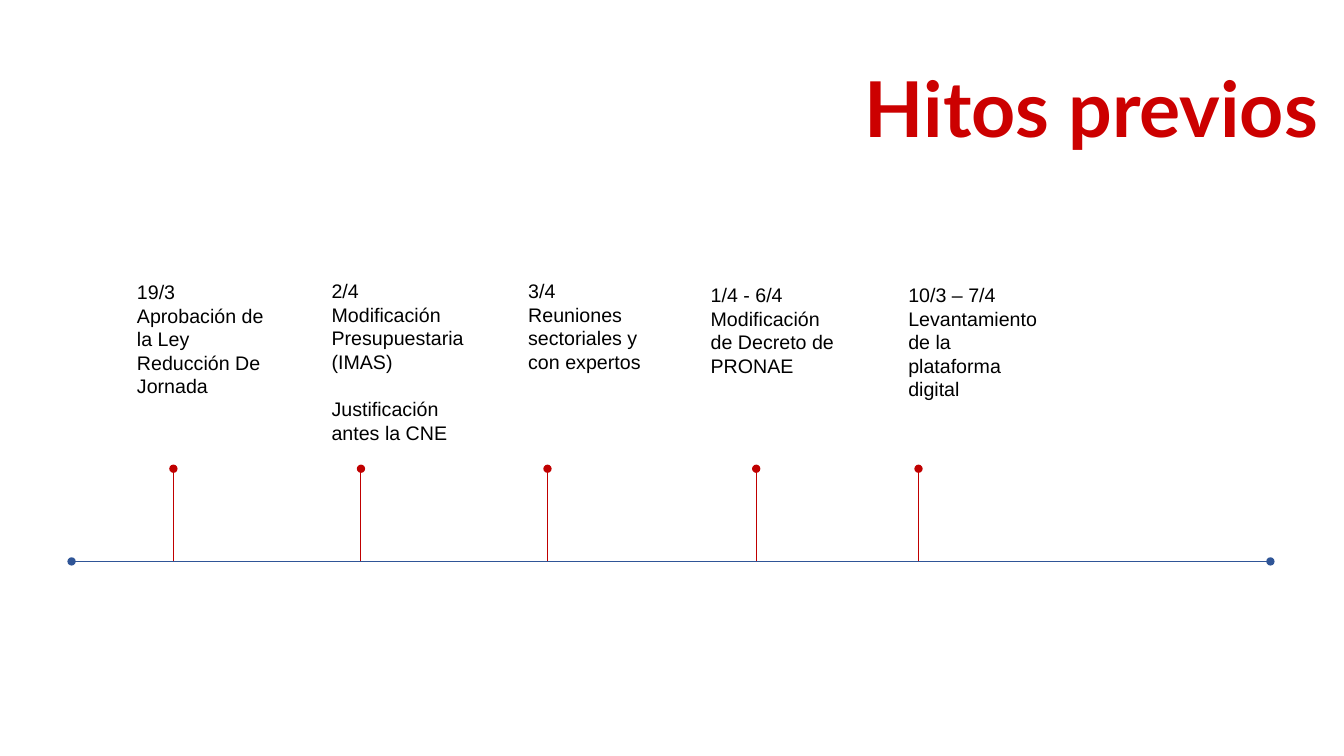
from lxml import etree
from pptx import Presentation
from pptx.dml.color import RGBColor
from pptx.enum.shapes import MSO_CONNECTOR
from pptx.enum.text import MSO_ANCHOR, PP_ALIGN
from pptx.oxml.ns import qn
from pptx.util import Inches, Pt

COLORS = {"title": "CC0000", "text": "000000", "axis": "2F5597", "stem": "C00000"}

TITLE = "Hitos previos"
# stem x, text left, text top, text height, paragraphs
MILESTONES = [
    (1.72, 1.26, 2.73, 1.28, ["19/3", "Aprobación de la Ley Reducción De Jornada"]),
    (3.58, 3.19, 2.72, 1.75, ["2/4", "Modificación Presupuestaria (IMAS)",
                              "Justificación antes la CNE"]),
    (5.43, 5.14, 2.72, 1.04, ["3/4", "Reuniones sectoriales y con expertos"]),
    (7.5, 6.95, 2.76, 1.04, ["1/4 - 6/4", "Modificación de Decreto de PRONAE"]),
    (9.11, 8.91, 2.76, 1.28, ["10/3 – 7/4", "Levantamiento de la plataforma digital"]),
]
AXIS_LEFT, AXIS_RIGHT, AXIS_Y = 0.71, 12.6, 5.57
STEM_TOP = 4.65
TEXT_WIDTH = 1.55
BLOCK_GAP = 17  # one line, before a second note under the same date


def add_text(slide, box, paragraphs, size=14, font="Arial", color="text", bold=False,
             align=PP_ALIGN.LEFT, anchor=MSO_ANCHOR.TOP, spacing=None):
    sp = slide.shapes.add_textbox(*[Inches(v) for v in box])
    tf = sp.text_frame
    tf.word_wrap = True
    tf.vertical_anchor = anchor
    for i, text in enumerate(paragraphs):
        p = tf.paragraphs[0] if i == 0 else tf.add_paragraph()
        p.alignment = align
        if spacing:
            p.line_spacing = spacing
        if i > 1:
            p.space_before = Pt(BLOCK_GAP)
        r = p.add_run()
        r.text = text
        r.font.size = Pt(size)
        r.font.name = font
        r.font.bold = bold
        r.font.color.rgb = RGBColor.from_string(COLORS[color])


def add_line(slide, start, end, color, ovals):
    points = [Inches(v) for v in (*start, *end)]
    line = slide.shapes.add_connector(MSO_CONNECTOR.STRAIGHT, *points)
    line.line.color.rgb = RGBColor.from_string(COLORS[color])
    line.line.width = Pt(0.75)
    ln = line.line._get_or_add_ln()
    for tag in ovals:
        etree.SubElement(ln, qn(tag), type="oval")
    etree.SubElement(line._element.spPr, qn("a:effectLst"))


prs = Presentation()
prs.slide_width, prs.slide_height = Inches(13.33), Inches(7.5)
s = prs.slides.add_slide(prs.slide_layouts[6])

# Title
add_text(s, (0.29, 0.39, 12.88, 1.45), [TITLE], size=55, font="Lato", color="title",
         bold=True, align=PP_ALIGN.RIGHT, anchor=MSO_ANCHOR.MIDDLE, spacing=0.9)

# Time axis
add_line(s, (AXIS_LEFT, AXIS_Y), (AXIS_RIGHT, AXIS_Y), "axis", ["a:headEnd", "a:tailEnd"])

# Milestones
for x, left, top, height, paragraphs in MILESTONES:
    add_line(s, (x, AXIS_Y), (x, STEM_TOP), "stem", ["a:tailEnd"])
    add_text(s, (left, top, TEXT_WIDTH, height), paragraphs)

prs.save("out.pptx")
